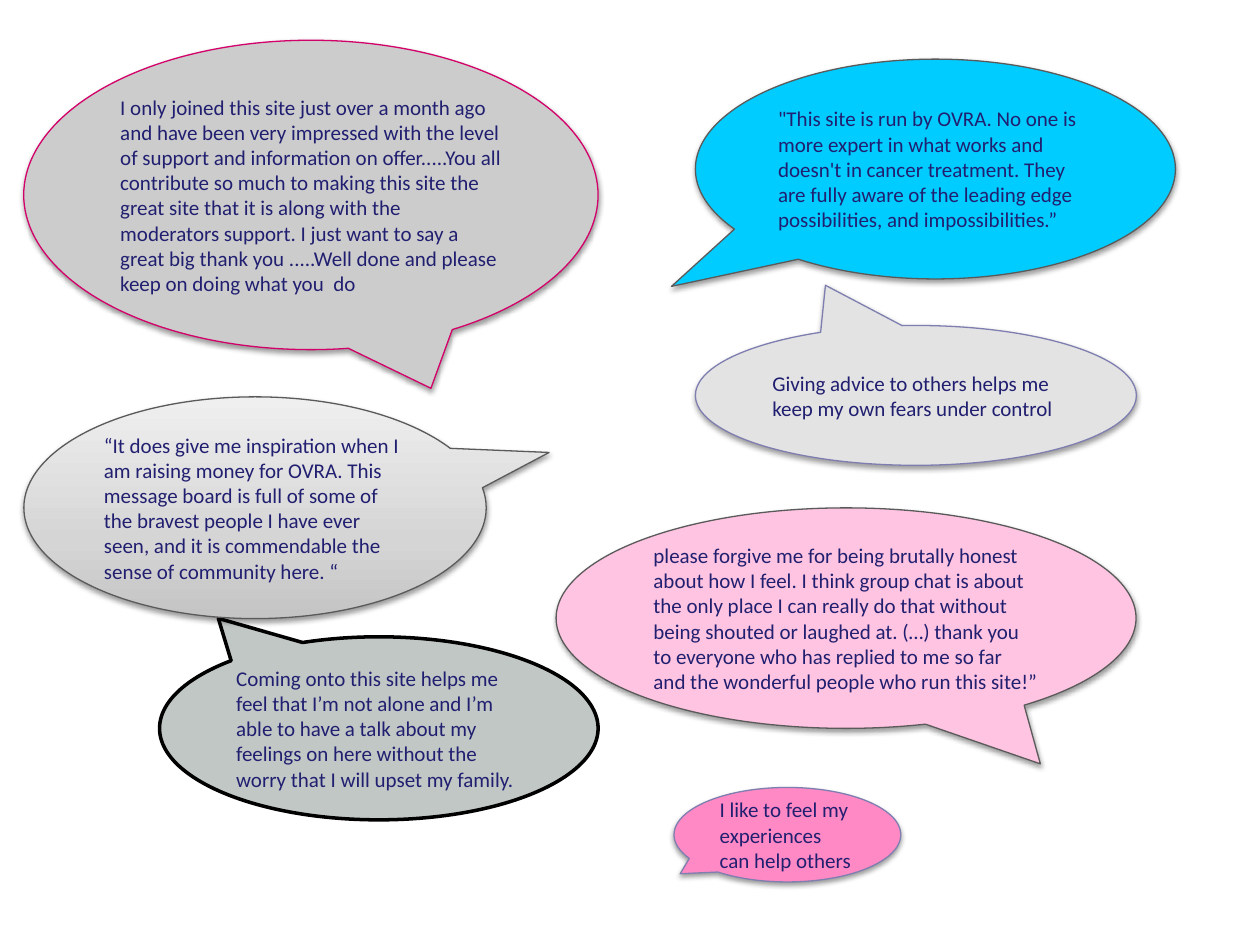
from dataclasses import dataclass
from typing import Optional

from lxml.etree import SubElement
from pptx import Presentation
from pptx.dml.color import RGBColor as Rgb
from pptx.enum.shapes import MSO_SHAPE as Preset
from pptx.enum.text import MSO_ANCHOR as Anchor, PP_ALIGN as Align
from pptx.oxml.ns import qn
from pptx.util import Pt


@dataclass(frozen=True)
class Theme:
    font: str = "Calibri"
    text_size: float = 12
    text: str = "211F70"
    shadow: str = "000000"
    thin: float = 0.75
    thick: float = 2
    outline: str = "5B5A5A"
    lilac: str = "7E7EB0"
    magenta: str = "D30069"
    black: str = "000000"
    silver: str = "CCCCCC"
    sage: str = "C1C7C5"
    mist: str = "E3E3E3"
    hot_pink: str = "FF89C4"
    soft_pink: str = "FFC4E1"
    cyan: str = "00CCFF"
    grey_fade: tuple = ((0, "C5C4C4"), (35, "D6D5D5"), (100, "EFEFEF"))


THEME = Theme()


@dataclass(frozen=True)
class Bubble:
    quote: str
    left: float
    top: float
    width: float
    height: float
    tail: tuple[float, float]
    fill: Optional[str]
    line: str = THEME.outline
    weight: float = THEME.thin
    shadow: bool = True


BUBBLES = (
    Bubble(
        "I only joined this site just over a month ago and have been very "
        "impressed with the level of support and information on offer.....You "
        "all contribute so much to making this site the great site that it is "
        "along with the moderators support. I just want to say a great big "
        "thank you .....Well done and please keep on doing what you  do",
        13.6, 23, 328.2, 176.8, (0.209, 0.625), THEME.silver, THEME.magenta),
    Bubble(
        "Coming onto this site helps me feel that I’m not alone and I’m able "
        "to have a talk about my feelings on here without the worry that I "
        "will upset my family.",
        91.2, 363.9, 250.6, 104.6, (-0.366, -0.601), THEME.sage,
        THEME.black, THEME.thick, shadow=False),
    Bubble(
        "I like to feel my experiences can help others",
        385.2, 450, 129.6, 54, (-0.473, 0.413), THEME.hot_pink, THEME.lilac),
    Bubble(
        "Giving advice to others helps me keep my own fears under control",
        397.4, 186, 252, 79.9, (-0.205, -0.788), THEME.mist, THEME.lilac),
    Bubble(
        "please forgive me for being brutally honest about how I feel. I think "
        "group chat is about the only place I can really do that without "
        "being shouted or laughed at. (…) thank you to everyone who has "
        "replied to me so far and the wonderful people who run this site!”",
        317.8, 290.2, 331.4, 126, (0.335, 0.661), THEME.soft_pink),
    Bubble(
        "“It does give me inspiration when I am raising money for OVRA. This "
        "message board is full of some of the bravest people I have ever "
        "seen, and it is commendable the sense of community here. “",
        13.7, 226.8, 264.2, 126.7, (0.636, -0.249), None),
    Bubble(
        "\"This site is run by OVRA. No one is more expert in what works and "
        "doesn't in cancer treatment. They are fully aware of the leading "
        "edge possibilities, and impossibilities.”",
        397.4, 33.8, 274.3, 125.6, (-0.55, 0.534), THEME.cyan),
)


def add_fade(shape) -> None:
    shape.fill.gradient()
    shape.fill.gradient_angle = 90
    stops = shape._element.spPr.find(".//" + qn("a:gsLst"))
    for stop in list(stops):
        stops.remove(stop)
    for percent, colour in THEME.grey_fade:
        stop = SubElement(stops, qn("a:gs"), pos=str(percent * 1000))
        SubElement(stop, qn("a:srgbClr"), val=colour)


def add_shadow(shape) -> None:
    effects = shape._element.spPr.find(qn("a:effectLst"))
    shadow = SubElement(
        effects, qn("a:outerShdw"), blurRad=str(Pt(3.1)), dist=str(Pt(1.6)),
        dir="5400000", rotWithShape="0")
    colour = SubElement(shadow, qn("a:srgbClr"), val=THEME.shadow)
    SubElement(colour, qn("a:alpha"), val="38000")


def write_quote(shape, quote: str) -> None:
    frame = shape.text_frame
    frame.word_wrap = True
    frame.vertical_anchor = Anchor.MIDDLE
    para = frame.paragraphs[0]
    para.alignment = Align.LEFT
    span = para.add_run()
    span.text = quote
    span.font.name = THEME.font
    span.font.size = Pt(THEME.text_size)
    span.font.color.rgb = Rgb.from_string(THEME.text)


def draw_bubble(page, bubble: Bubble) -> None:
    shape = page.shapes.add_shape(
        Preset.OVAL_CALLOUT, Pt(bubble.left), Pt(bubble.top),
        Pt(bubble.width), Pt(bubble.height))
    for index, offset in enumerate(bubble.tail):
        shape.adjustments[index] = offset
    if bubble.fill is None:
        add_fade(shape)
    else:
        shape.fill.solid()
        shape.fill.fore_color.rgb = Rgb.from_string(bubble.fill)
    shape.line.color.rgb = Rgb.from_string(bubble.line)
    shape.line.width = Pt(bubble.weight)
    shape.shadow.inherit = False
    if bubble.shadow:
        add_shadow(shape)
    write_quote(shape, bubble.quote)


def main() -> None:
    deck = Presentation()
    deck.slide_width, deck.slide_height = Pt(720), Pt(540)
    page = deck.slides.add_slide(deck.slide_layouts[6])
    for bubble in BUBBLES:
        draw_bubble(page, bubble)
    deck.save("out.pptx")


if __name__ == "__main__":
    main()
